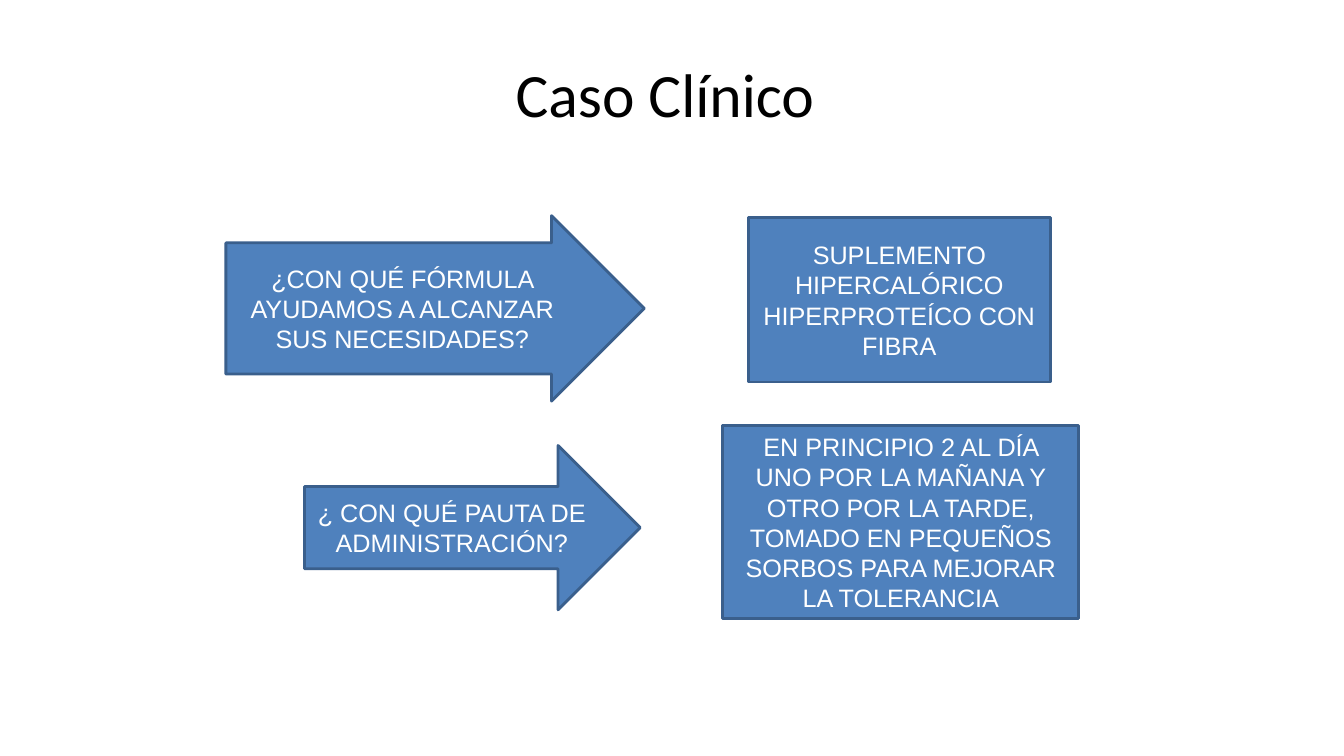
import pptx
import pptx.dml.color
import pptx.enum.shapes
import pptx.enum.text
import pptx.util

WIDTH, HEIGHT = 13.33, 7.5
ARROW = pptx.enum.shapes.MSO_SHAPE.RIGHT_ARROW
RECTANGLE = pptx.enum.shapes.MSO_SHAPE.RECTANGLE

# kind, (left, top, width, height) in inches, shaft share of an arrow, wording
QUESTIONS_AND_ANSWERS = [
    (ARROW, (2.24, 2.14, 4.15, 1.84), 0.707,
     "¿CON QUÉ FÓRMULA AYUDAMOS A ALCANZAR SUS NECESIDADES?"),
    (RECTANGLE, (7.42, 2.16, 3, 1.63), None,
     "SUPLEMENTO HIPERCALÓRICO HIPERPROTEÍCO CON FIBRA"),
    (ARROW, (3.02, 4.42, 3.33, 1.63), 0.5,
     "¿ CON QUÉ PAUTA DE ADMINISTRACIÓN?"),
    (RECTANGLE, (7.17, 4.22, 3.53, 1.92), None,
     "EN PRINCIPIO 2 AL DÍA UNO POR LA MAÑANA Y OTRO POR LA TARDE, "
     "TOMADO EN PEQUEÑOS SORBOS PARA MEJORAR LA TOLERANCIA"),
]


def color(value):
    return pptx.dml.color.RGBColor.from_string(value)


def write(shape, text, font, size, ink):
    """Set centred, wrapped text in one font."""
    frame = shape.text_frame
    frame.text = text
    frame.word_wrap = True
    frame.auto_size = pptx.enum.text.MSO_AUTO_SIZE.NONE
    frame.vertical_anchor = pptx.enum.text.MSO_ANCHOR.MIDDLE
    para = frame.paragraphs[0]
    para.alignment = pptx.enum.text.PP_ALIGN.CENTER
    span = para.runs[0]
    span.font.name = font
    span.font.size = pptx.util.Pt(size)
    span.font.color.rgb = color(ink)


def place_title(page, text):
    title = page.shapes.title
    title.left = pptx.util.Inches(WIDTH * 0.05)
    title.top = pptx.util.Inches(HEIGHT * 0.04)
    title.width = pptx.util.Inches(WIDTH * 0.9)
    title.height = pptx.util.Inches(HEIGHT / 6)
    write(title, text, "Calibri", 44, "000000")


def add_block(page, kind, bounds, shaft, text):
    block = page.shapes.add_shape(kind, *map(pptx.util.Inches, bounds))
    if shaft:
        block.adjustments[0] = shaft
    block.shadow.inherit = False
    block.fill.solid()
    block.fill.fore_color.rgb = color("4F81BD")
    block.line.color.rgb = color("3A5F8C")
    block.line.width = pptx.util.Pt(2)
    write(block, text, "Arial", 18, "FFFFFF")


def main():
    deck = pptx.Presentation()
    deck.slide_width = pptx.util.Inches(WIDTH)
    deck.slide_height = pptx.util.Inches(HEIGHT)
    page = deck.slides.add_slide(deck.slide_layouts.get_by_name("Title Only"))
    place_title(page, "Caso Clínico ")
    for block in QUESTIONS_AND_ANSWERS:
        add_block(page, *block)
    deck.save("out.pptx")


if __name__ == "__main__":
    main()
